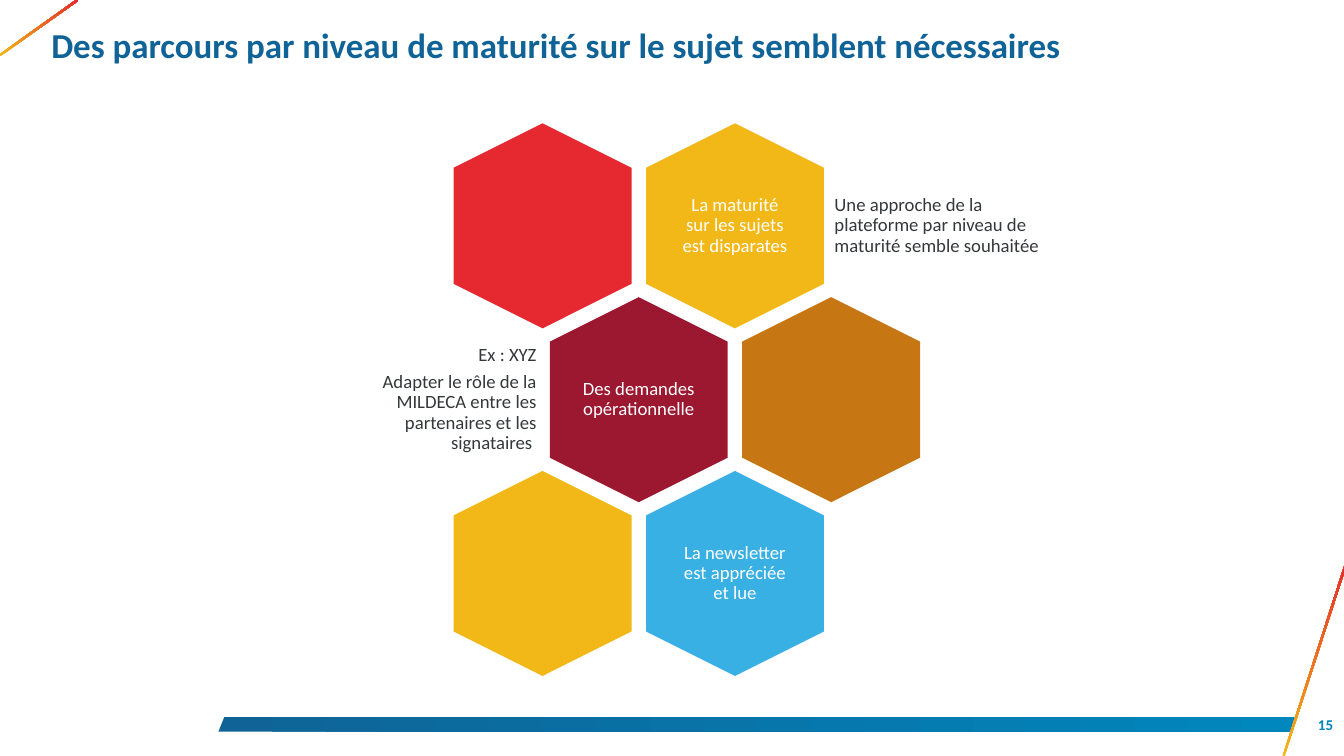
from pptx import Presentation
from pptx.dml.color import RGBColor
from pptx.enum.shapes import MSO_SHAPE
from pptx.enum.text import MSO_ANCHOR, PP_ALIGN
from pptx.util import Pt

HEXAGON, RECTANGLE = MSO_SHAPE.HEXAGON, MSO_SHAPE.RECTANGLE
TOP, MIDDLE = MSO_ANCHOR.TOP, MSO_ANCHOR.MIDDLE
LEFT, CENTER, RIGHT = PP_ALIGN.LEFT, PP_ALIGN.CENTER, PP_ALIGN.RIGHT

WHITE = RGBColor(0xFF, 0xFF, 0xFF)
DARK_GRAY = RGBColor(0x35, 0x38, 0x3B)
NAVY = RGBColor(0x0F, 0x63, 0x96)
BLUE = RGBColor(0x00, 0x87, 0xBD)
SKY = RGBColor(0x39, 0xB0, 0xE3)
YELLOW = RGBColor(0xF2, 0xB8, 0x18)
RED = RGBColor(0xE6, 0x29, 0x30)
BURGUNDY = RGBColor(0x9C, 0x17, 0x30)
BROWN = RGBColor(0xC7, 0x76, 0x14)

FONT = "Calibri"
HEXAGON_LENGTH, HEXAGON_BREADTH = 164.2, 142.6
FIRST_X, FIRST_Y = 434.8, 180.9
COLUMN_STEP, ROW_STEP = 154.2, 139.2
LABEL_WIDTH, LABEL_HEIGHT = 98, 113
NOTE_HEIGHT = 98.6

CELLS = [
    (0, 0, RED, None),
    (0, 1, YELLOW, "La maturité sur les sujets est disparates"),
    (1, 0.5, BURGUNDY, "Des demandes opérationnelle"),
    (1, 1.5, BROWN, None),
    (2, 0, YELLOW, None),
    (2, 1, SKY, "La newsletter est appréciée et lue"),
]
NOTES = [
    (0, 664.6, 183, LEFT,
     ["Une approche de la plateforme par niveau de maturité semble souhaitée"]),
    (1, 257, 177.2, RIGHT,
     ["Ex : XYZ",
      "Adapter le rôle de la MILDECA entre les partenaires et les signataires "]),
]


def add_text(slide, left, top, width, height, paragraphs, *, size=15, color=DARK_GRAY,
             bold=False, align=LEFT, anchor=MIDDLE, inset=4.2, line_spacing=0.9,
             space_after=5.25):
    box = slide.shapes.add_textbox(Pt(left), Pt(top), Pt(width), Pt(height))
    frame = box.text_frame
    frame.word_wrap = True
    frame.vertical_anchor = anchor
    frame.margin_left = frame.margin_right = Pt(inset)
    frame.margin_top = frame.margin_bottom = Pt(inset)
    frame.text = "\n".join(paragraphs)
    for paragraph in frame.paragraphs:
        paragraph.alignment = align
        paragraph.line_spacing = line_spacing
        paragraph.space_after = Pt(space_after)
        font = paragraph.font
        font.name, font.size, font.bold = FONT, Pt(size), bold
        font.color.rgb = color


def fill_gradient(shape, start, end):
    shape.shadow.inherit = False
    shape.line.fill.background()
    shape.fill.gradient()
    shape.fill.gradient_angle = 0
    for stop, color in zip(shape.fill.gradient_stops, (start, end)):
        stop.color.rgb = color


def add_footer_bar(slide):
    builder = slide.shapes.build_freeform(Pt(179.7), Pt(574.5))
    corners = [(1039.2, 574.5), (1034.7, 586), (175.1, 586)]
    builder.add_line_segments([(Pt(x), Pt(y)) for x, y in corners], close=True)
    fill_gradient(builder.convert_to_shape(), NAVY, BLUE)


def add_corner_stripe(slide, left, top, length, rotation):
    stripe = slide.shapes.add_shape(RECTANGLE, Pt(left), Pt(top), Pt(length), Pt(1.7))
    stripe.rotation = rotation
    fill_gradient(stripe, YELLOW, RED)


def add_hexagon(slide, center_x, center_y, color):
    hexagon = slide.shapes.add_shape(
        HEXAGON, Pt(center_x - HEXAGON_LENGTH / 2), Pt(center_y - HEXAGON_BREADTH / 2),
        Pt(HEXAGON_LENGTH), Pt(HEXAGON_BREADTH))
    hexagon.rotation = 90
    hexagon.adjustments[0] = 0.25
    hexagon.shadow.inherit = False
    hexagon.fill.solid()
    hexagon.fill.fore_color.rgb = color
    hexagon.line.fill.background()


def add_cell(slide, row, column, color, label):
    center_x = FIRST_X + column * COLUMN_STEP
    center_y = FIRST_Y + row * ROW_STEP
    add_hexagon(slide, center_x, center_y, color)
    if label:
        add_text(slide, center_x - LABEL_WIDTH / 2, center_y - LABEL_HEIGHT / 2,
                 LABEL_WIDTH, LABEL_HEIGHT, [label], color=WHITE, align=CENTER)


def main():
    presentation = Presentation()
    presentation.slide_width, presentation.slide_height = Pt(1077.12), Pt(605.52)
    slide = presentation.slides.add_slide(presentation.slide_layouts[6])

    add_footer_bar(slide)
    add_corner_stripe(slide, 970.6, 526.5, 167, 288)
    add_corner_stripe(slide, -7.2, 21.4, 76.3, 324.6)
    add_text(slide, 38.2, 15.8, 1000.8, 64.8,
             ["Des parcours par niveau de maturité sur le sujet semblent nécessaires"],
             size=28, color=NAVY, bold=True, anchor=TOP, inset=2.9,
             line_spacing=1, space_after=0)
    for cell in CELLS:
        add_cell(slide, *cell)
    for row, left, width, align, paragraphs in NOTES:
        top = FIRST_Y + row * ROW_STEP - NOTE_HEIGHT / 2
        add_text(slide, left, top, width, NOTE_HEIGHT, paragraphs, align=align)
    add_text(slide, 1027.4, 571.7, 41, 16.6, ["15"], size=12, color=BLUE, bold=True,
             align=RIGHT, inset=0, line_spacing=1, space_after=0)

    presentation.save("out.pptx")


if __name__ == "__main__":
    main()
